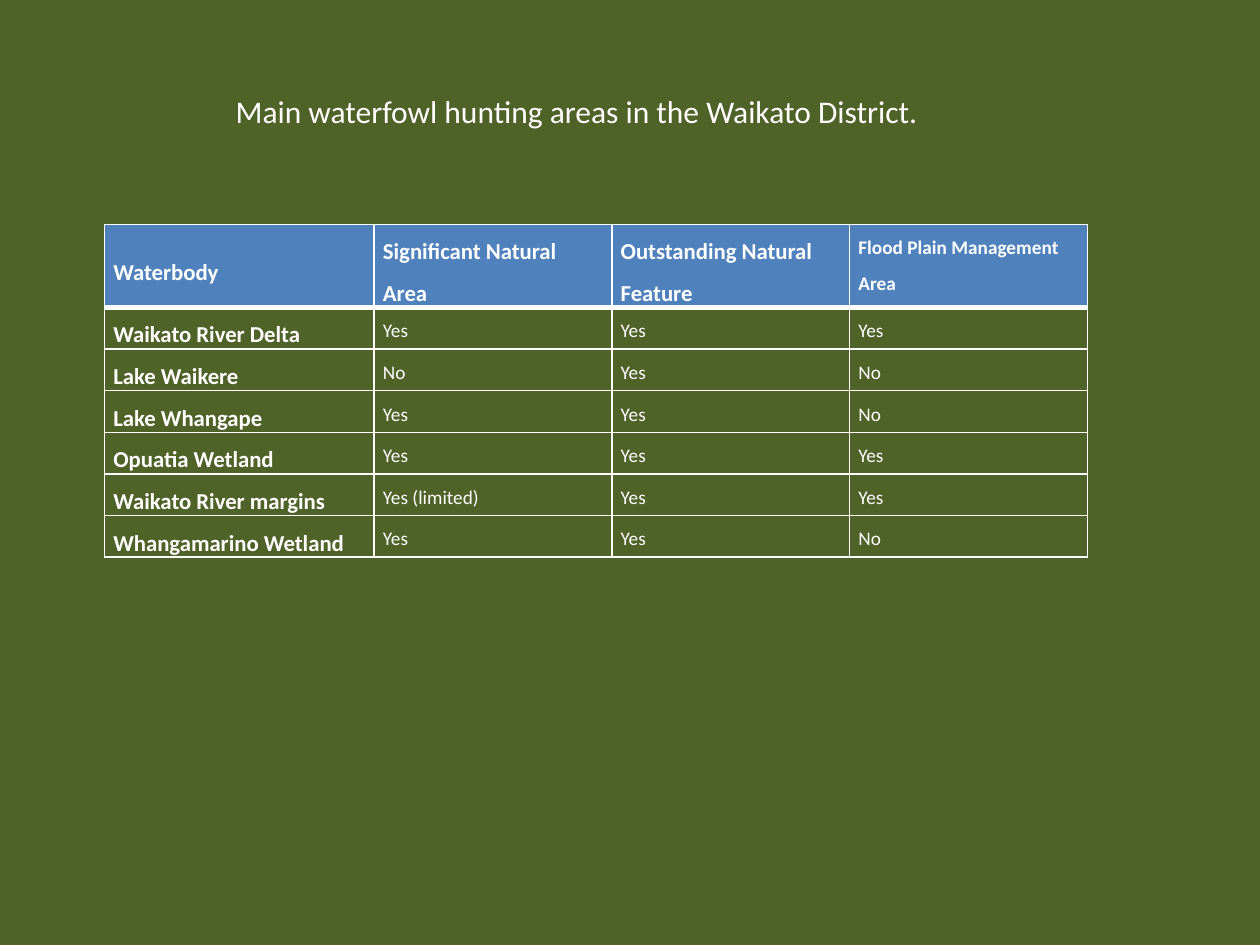
from lxml import etree
from pptx import Presentation
from pptx import util as u
from pptx.dml.color import RGBColor
from pptx.enum import text
from pptx.oxml import ns

OLIVE = RGBColor(0x4F, 0x62, 0x28)
BLUE = RGBColor(0x4F, 0x81, 0xBD)
WHITE = RGBColor(0xFF, 0xFF, 0xFF)
FONT = "Calibri"

HEADINGS = ["Waterbody", "Significant Natural Area",
            "Outstanding Natural Feature", "Flood Plain Management Area"]
WATERBODIES = [
    ("Waikato River Delta", "Yes", "Yes", "Yes"),
    ("Lake Waikere", "No", "Yes", "No"),
    ("Lake Whangape", "Yes", "Yes", "No"),
    ("Opuatia Wetland", "Yes", "Yes", "Yes"),
    ("Waikato River margins", "Yes (limited)", "Yes", "Yes"),
    ("Whangamarino Wetland", "Yes", "Yes", "No"),
]


def add_run(paragraph, words, size, bold=False):
    run = paragraph.add_run()
    run.text = words
    run.font.name = FONT
    run.font.size = u.Pt(size)
    run.font.bold = bold
    run.font.color.rgb = WHITE


def add_borders(cell, top, bottom):
    properties = cell._tc.get_or_add_tcPr()
    for side, width in (("lnL", 1), ("lnR", 1), ("lnT", top), ("lnB", bottom)):
        line = etree.SubElement(properties, ns.qn(f"a:{side}"), w=str(u.Pt(width)))
        fill = etree.SubElement(line, ns.qn("a:solidFill"))
        etree.SubElement(fill, ns.qn("a:srgbClr"), val=str(WHITE))


def place_title(slide, left, top, width, height):
    title = slide.shapes.title
    title.left, title.top, title.width, title.height = left, top, width, height
    frame = title.text_frame
    frame.word_wrap = False
    frame.auto_size = text.MSO_AUTO_SIZE.NONE
    frame.vertical_anchor = text.MSO_ANCHOR.TOP
    paragraph = frame.paragraphs[0]
    paragraph.alignment = text.PP_ALIGN.LEFT
    add_run(paragraph, "Main waterfowl hunting areas in the Waikato District.", 18)


def fill_cell(cell, words, row, column):
    is_header = row == 0
    add_borders(cell, top=3 if row == 1 else 1, bottom=3 if is_header else 1)
    if is_header:
        cell.fill.solid()
        cell.fill.fore_color.rgb = BLUE
    else:
        cell.fill.background()
    cell.margin_left = cell.margin_right = u.Inches(0.07)
    cell.margin_top = cell.margin_bottom = 0
    is_corner = is_header and column == 0
    cell.vertical_anchor = text.MSO_ANCHOR.MIDDLE if is_corner else text.MSO_ANCHOR.TOP
    paragraph = cell.text_frame.paragraphs[0]
    paragraph.line_spacing = 1.5
    is_large = column == 0 or (is_header and column < 3)
    add_run(paragraph, words, 13 if is_large else 11, is_header or column == 0)


def place_areas_table(slide, left, top, width, height):
    rows = [HEADINGS, *WATERBODIES]
    areas = slide.shapes.add_table(len(rows), len(HEADINGS), left, top, width, height).table
    name_width, header_height = u.Inches(2.14), u.Inches(0.65)
    for index, column in enumerate(areas.columns):
        column.width = name_width if index == 0 else (width - name_width) // 3
    for index, row in enumerate(areas.rows):
        row.height = (header_height if index == 0
                      else (height - header_height) // len(WATERBODIES))
    for row, values in enumerate(rows):
        for column, words in enumerate(values):
            fill_cell(areas.cell(row, column), words, row, column)


def main():
    deck = Presentation()
    deck.slide_width, deck.slide_height = u.Inches(10), u.Inches(7.5)
    slide = deck.slides.add_slide(deck.slide_layouts[5])
    slide.background.fill.solid()
    slide.background.fill.fore_color.rgb = OLIVE
    place_areas_table(slide, u.Inches(0.83), u.Inches(1.78), u.Inches(7.8), u.Inches(2.6))
    place_title(slide, u.Inches(1.77), u.Inches(0.68), u.Inches(5.73), u.Inches(0.71))
    deck.save("out.pptx")


if __name__ == "__main__":
    main()
